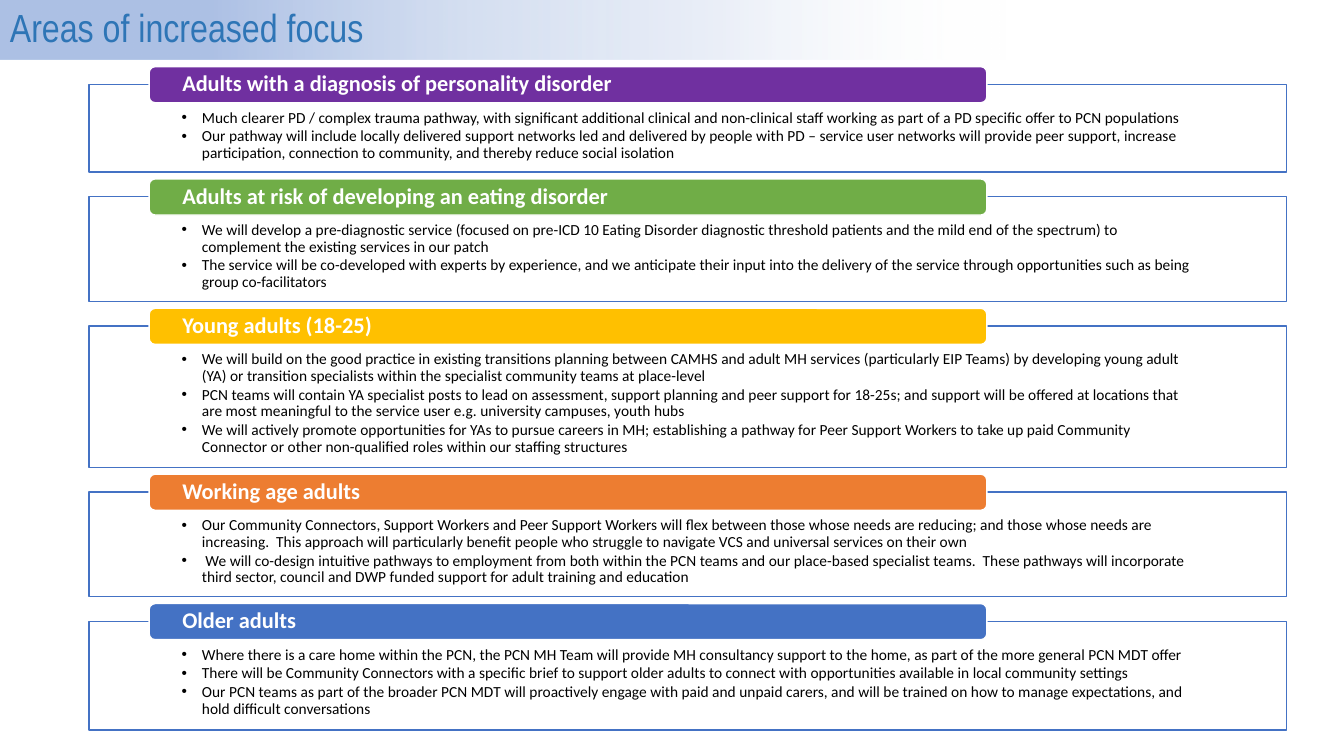
from lxml import etree
from pptx import Presentation
from pptx.dml.color import RGBColor
from pptx.enum.shapes import MSO_SHAPE
from pptx.enum.text import MSO_ANCHOR, PP_ALIGN
from pptx.oxml.ns import qn
from pptx.util import Cm, Pt

RECT = MSO_SHAPE.RECTANGLE
ROUND = MSO_SHAPE.ROUNDED_RECTANGLE
TOP = MSO_ANCHOR.TOP
MIDDLE = MSO_ANCHOR.MIDDLE
LEFT = PP_ALIGN.LEFT

WHITE = RGBColor(0xFF, 0xFF, 0xFF)
BLACK = RGBColor(0x00, 0x00, 0x00)
BLUE = RGBColor(0x44, 0x72, 0xC4)
PURPLE = RGBColor(0x70, 0x30, 0xA0)
GREEN = RGBColor(0x70, 0xAD, 0x47)
GOLD = RGBColor(0xFF, 0xC0, 0x00)
ORANGE = RGBColor(0xED, 0x7D, 0x31)
TITLE = RGBColor(0x2E, 0x75, 0xB6)
PALE = RGBColor(0xF6, 0xF8, 0xFC)
SKY = RGBColor(0xAB, 0xC0, 0xE4)
STEEL = RGBColor(0x93, 0xAD, 0xDD)

# Position, colour and opacity in percent, from right to left
STOPS = [(0, PALE, 0), (29, SKY, 25), (54, SKY, 50), (79, STEEL, 75)]

START = 2.13  # top of the first box, cm
GAP = 0.62    # space between boxes, cm
RISE = 0.45   # how far a heading sits above its box, cm

# Heading, colour, box height in cm, bullets
PARTS = [
    ("Adults with a diagnosis of personality disorder", PURPLE, 2.21, [
        "Much clearer PD / complex trauma pathway, with significant additional clinical and "
        "non-clinical staff working as part of a PD specific offer to PCN populations",
        "Our pathway will include locally delivered support networks led and delivered by people "
        "with PD – service user networks will provide peer support, increase participation, "
        "connection to community, and thereby reduce social isolation",
    ]),
    ("Adults at risk of developing an eating disorder", GREEN, 2.64, [
        "We will develop a pre-diagnostic service (focused on pre-ICD 10 Eating Disorder "
        "diagnostic threshold patients and the mild end of the spectrum) to complement the "
        "existing services in our patch",
        "The service will be co-developed with experts by experience, and we anticipate their "
        "input into the delivery of the service through opportunities such as being group "
        "co-facilitators",
    ]),
    ("Young adults (18-25)", GOLD, 3.56, [
        "We will build on the good practice in existing transitions planning between CAMHS and "
        "adult MH services (particularly EIP Teams) by developing young adult (YA) or transition "
        "specialists within the specialist community teams at place-level",
        "PCN teams will contain YA specialist posts to lead on assessment, support planning and "
        "peer support for 18-25s; and support will be offered at locations that are most "
        "meaningful to the service user e.g. university campuses, youth hubs",
        "We will actively promote opportunities for YAs to pursue careers in MH; establishing a "
        "pathway for Peer Support Workers to take up paid Community Connector or other "
        "non-qualified roles within our staffing structures",
    ]),
    ("Working age adults", ORANGE, 2.64, [
        "Our Community Connectors, Support Workers and Peer Support Workers will flex between "
        "those whose needs are reducing; and those whose needs are increasing.  This approach "
        "will particularly benefit people who struggle to navigate VCS and universal services "
        "on their own",
        " We will co-design intuitive pathways to employment from both within the PCN teams and "
        "our place-based specialist teams.  These pathways will incorporate third sector, council "
        "and DWP funded support for adult training and education",
    ]),
    ("Older adults", BLUE, 2.74, [
        "Where there is a care home within the PCN, the PCN MH Team will provide MH consultancy "
        "support to the home, as part of the more general PCN MDT offer",
        "There will be Community Connectors with a specific brief to support older adults to "
        "connect with opportunities available in local community settings",
        "Our PCN teams as part of the broader PCN MDT will proactively engage with paid and "
        "unpaid carers, and will be trained on how to manage expectations, and hold difficult "
        "conversations",
    ]),
]


def add_box(slide, kind, left, top, width, height, fill=None, line=None):
    box = slide.shapes.add_shape(kind, Cm(left), Cm(top), Cm(width), Cm(height))
    box.shadow.inherit = False
    if fill is not None:
        box.fill.solid()
        box.fill.fore_color.rgb = fill
    if line is None:
        box.line.fill.background()
    else:
        box.line.color.rgb = line
        box.line.width = Pt(1)
    return box


def set_frame(box, anchor, left, top, right, bottom):
    frame = box.text_frame
    frame.word_wrap = True
    frame.vertical_anchor = anchor
    frame.margin_left, frame.margin_right = Cm(left), Cm(right)
    frame.margin_top, frame.margin_bottom = Cm(top), Cm(bottom)
    return frame


def add_run(para, text, font, size, color, bold=False):
    para.alignment = LEFT
    para.line_spacing = 0.9
    run = para.add_run()
    run.text = text
    run.font.name = font
    run.font.size = Pt(size)
    run.font.color.rgb = color
    run.font.bold = bold


def set_alpha(color, percent):
    etree.SubElement(color, qn("a:alpha"), val=str(percent * 1000))


def set_bullet(para):
    props = para._p.get_or_add_pPr()
    props.set("marL", str(Cm(0.51)))
    props.set("indent", str(-Cm(0.51)))
    etree.SubElement(props, qn("a:buFont"), typeface="Arial")
    etree.SubElement(props, qn("a:buChar"), char="•")


def set_fade(box):
    box.fill.gradient()
    grad = box.fill._xPr.find(qn("a:gradFill"))
    stops = grad.find(qn("a:gsLst"))
    for old in list(stops):
        stops.remove(old)
    for place, color, percent in STOPS:
        stop = etree.SubElement(stops, qn("a:gs"), pos=str(place * 1000))
        set_alpha(etree.SubElement(stop, qn("a:srgbClr"), val=str(color)), percent)
    box.fill.gradient_angle = 180


def add_title(slide):
    band = add_box(slide, RECT, 0, 0, 25.4, 1.5)
    set_fade(band)
    frame = set_frame(band, MIDDLE, 0.25, 0.13, 0.25, 0.13)
    add_run(frame.paragraphs[0], "Areas of increased focus", "Arial Narrow", 28, TITLE)


def add_body(slide, top, height, points):
    body = add_box(slide, RECT, 2.24, top, 30.18, height, WHITE, BLUE)
    set_alpha(body.fill._xPr.find(qn("a:solidFill"))[0], 90)
    frame = set_frame(body, TOP, 2.34, 0.64, 2.34, 0.23)
    for i, point in enumerate(points):
        para = frame.add_paragraph() if i else frame.paragraphs[0]
        add_run(para, point, "Calibri", 11, BLACK)
        para.space_after = Pt(1.5)
        set_bullet(para)


def add_head(slide, top, text, color):
    head = add_box(slide, ROUND, 3.76, top, 21.11, 0.91, color, WHITE)
    frame = set_frame(head, MIDDLE, 0.79, 0, 0.79, 0)
    add_run(frame.paragraphs[0], text, "Calibri", 16, WHITE, True)


def main():
    deck = Presentation()
    deck.slide_width, deck.slide_height = Cm(33.87), Cm(19.05)
    slide = deck.slides.add_slide(deck.slide_layouts[6])
    add_title(slide)

    # Stack the boxes with equal gaps
    top = START
    for text, color, height, points in PARTS:
        add_body(slide, top, height, points)
        add_head(slide, top - RISE, text, color)
        top += height + GAP

    deck.save("out.pptx")


if __name__ == "__main__":
    main()
